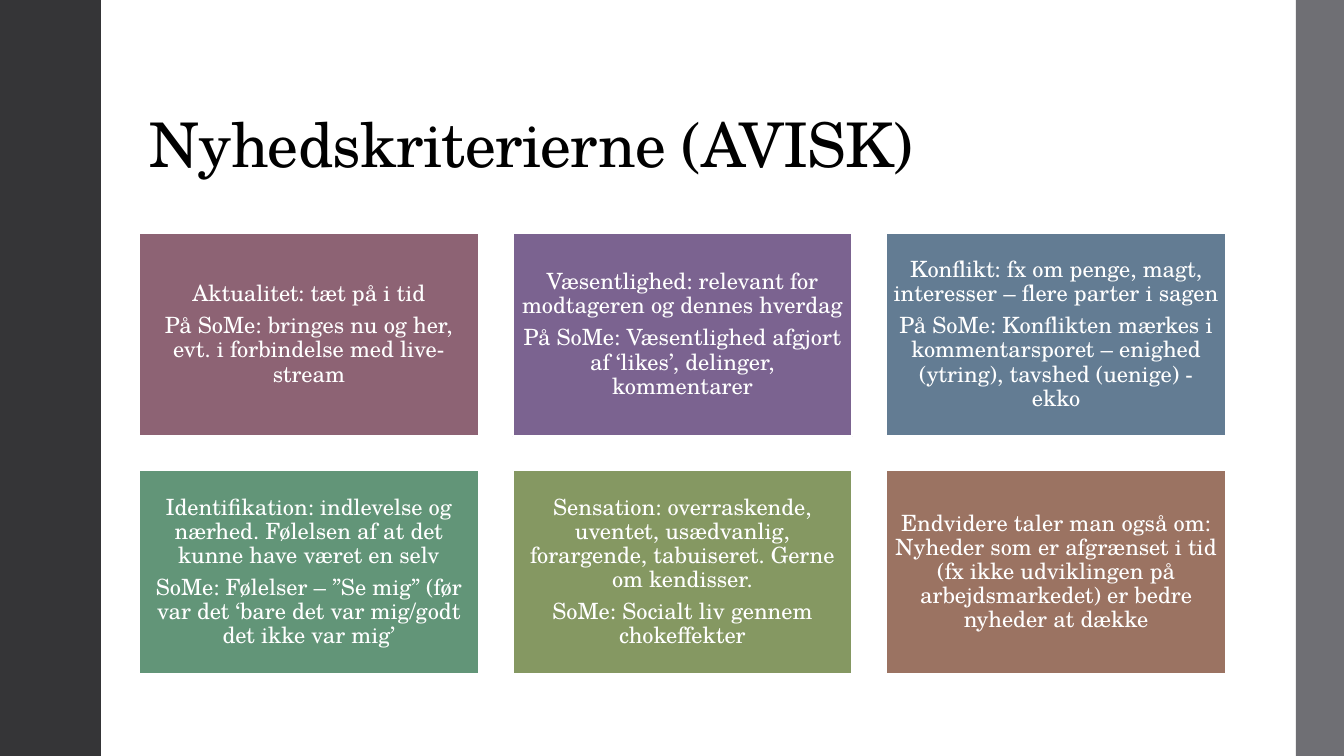
import pptx
import pptx.dml.color
import pptx.enum.shapes
import pptx.enum.text
import pptx.util

PX = 914400 / 100.8
PAGE_WIDTH, PAGE_HEIGHT = 1344, 756
FONT = "TeX Gyre Schola"
COLUMNS = 3
CARD_GAP = 34

CRITERIA = [
    ("8D6374", ["Aktualitet: tæt på i tid",
                "På SoMe: bringes nu og her, evt. i forbindelse med live-stream"]),
    ("7B6390", ["Væsentlighed: relevant for modtageren og dennes hverdag",
                "På SoMe: Væsentlighed afgjort af ‘likes’, delinger, kommentarer"]),
    ("637C93", ["Konflikt: fx om penge, magt, interesser – flere parter i sagen",
                "På SoMe: Konflikten mærkes i kommentarsporet – enighed (ytring), "
                "tavshed (uenige) - ekko"]),
    ("629578", ["Identifikation: indlevelse og nærhed. Følelsen af at det kunne "
                "have været en selv",
                "SoMe: Følelser – ”Se mig” (før var det ‘bare det var mig/godt "
                "det ikke var mig’"]),
    ("859862", ["Sensation: overraskende, uventet, usædvanlig, forargende, "
                "tabuiseret. Gerne om kendisser.",
                "SoMe: Socialt liv gennem chokeffekter"]),
    ("9B7362", ["Endvidere taler man også om: Nyheder som er afgrænset i tid "
                "(fx ikke udviklingen på arbejdsmarkedet) er bedre nyheder at dække"]),
]


def px(length):
    """Turn pixels into EMU."""
    return pptx.util.Emu(round(length * PX))


def paint(fill, color):
    """Give a fill one solid colour."""
    fill.solid()
    fill.fore_color.rgb = pptx.dml.color.RGBColor.from_string(color)


def add_text(para, text, size, color, align):
    """Write one formatted run into a paragraph."""
    para.alignment = align
    para.line_spacing = 0.9
    span = para.add_run()
    span.text = text
    span.font.name = FONT
    span.font.size = pptx.util.Pt(size)
    paint(span.font.fill, color)
    return span


def add_rectangle(page, left, top, width, height, color):
    """Draw a plain filled rectangle without outline."""
    box = page.shapes.add_shape(pptx.enum.shapes.MSO_SHAPE.RECTANGLE,
                                px(left), px(top), px(width), px(height))
    box.shadow.inherit = False
    paint(box.fill, color)
    box.line.fill.background()
    return box


def place_title(page, left, top, width, height, text):
    """Move the title placeholder into its box and fill it."""
    title = page.shapes.title
    title.left, title.top = px(left), px(top)
    title.width, title.height = px(width), px(height)
    frame = title.text_frame
    frame.word_wrap = True
    frame.auto_size = pptx.enum.text.MSO_AUTO_SIZE.NONE
    frame.vertical_anchor = pptx.enum.text.MSO_ANCHOR.BOTTOM
    span = add_text(frame.paragraphs[0], text, 44, "000000",
                    pptx.enum.text.PP_ALIGN.LEFT)
    span.font._element.set("spc", "-50")


def add_card(page, left, top, width, height, color, texts):
    """Draw one criterion card with centred paragraphs."""
    card = add_rectangle(page, left, top, width, height, color)
    paint(card.line.fill, "FFFFFF")
    card.line.width = pptx.util.Pt(1.35)
    frame = card.text_frame
    frame.word_wrap = True
    frame.vertical_anchor = pptx.enum.text.MSO_ANCHOR.MIDDLE
    frame.margin_left = frame.margin_right = px(7)
    frame.margin_top = frame.margin_bottom = px(7)
    for index, text in enumerate(texts):
        para = frame.add_paragraph() if index else frame.paragraphs[0]
        add_text(para, text, 16, "FFFFFF", pptx.enum.text.PP_ALIGN.CENTER)
        para.space_after = pptx.util.Pt(5.6)


def add_card_grid(page, left, top, width, height):
    """Lay the criteria out as a grid filling the given box."""
    rows = -(-len(CRITERIA) // COLUMNS)
    card_width = (width - CARD_GAP * (COLUMNS - 1)) / COLUMNS
    card_height = (height - CARD_GAP * (rows - 1)) / rows
    for index, (color, texts) in enumerate(CRITERIA):
        row, column = divmod(index, COLUMNS)
        add_card(page, left + column * (card_width + CARD_GAP),
                 top + row * (card_height + CARD_GAP),
                 card_width, card_height, color, texts)


def main():
    """Build the slide and save the deck."""
    deck = pptx.Presentation()
    deck.slide_width, deck.slide_height = px(PAGE_WIDTH), px(PAGE_HEIGHT)
    page = deck.slides.add_slide(deck.slide_layouts[5])
    paint(page.background.fill, "FFFFFF")
    place_title(page, 139, 40, 1087, 146, "Nyhedskriterierne (AVISK)")
    add_rectangle(page, 0, 0, 101, PAGE_HEIGHT, "353537")
    add_rectangle(page, 1296, 0, 48, PAGE_HEIGHT, "6F6F74")
    add_card_grid(page, 139, 233, 1087, 441)
    deck.save("out.pptx")


if __name__ == "__main__":
    main()
